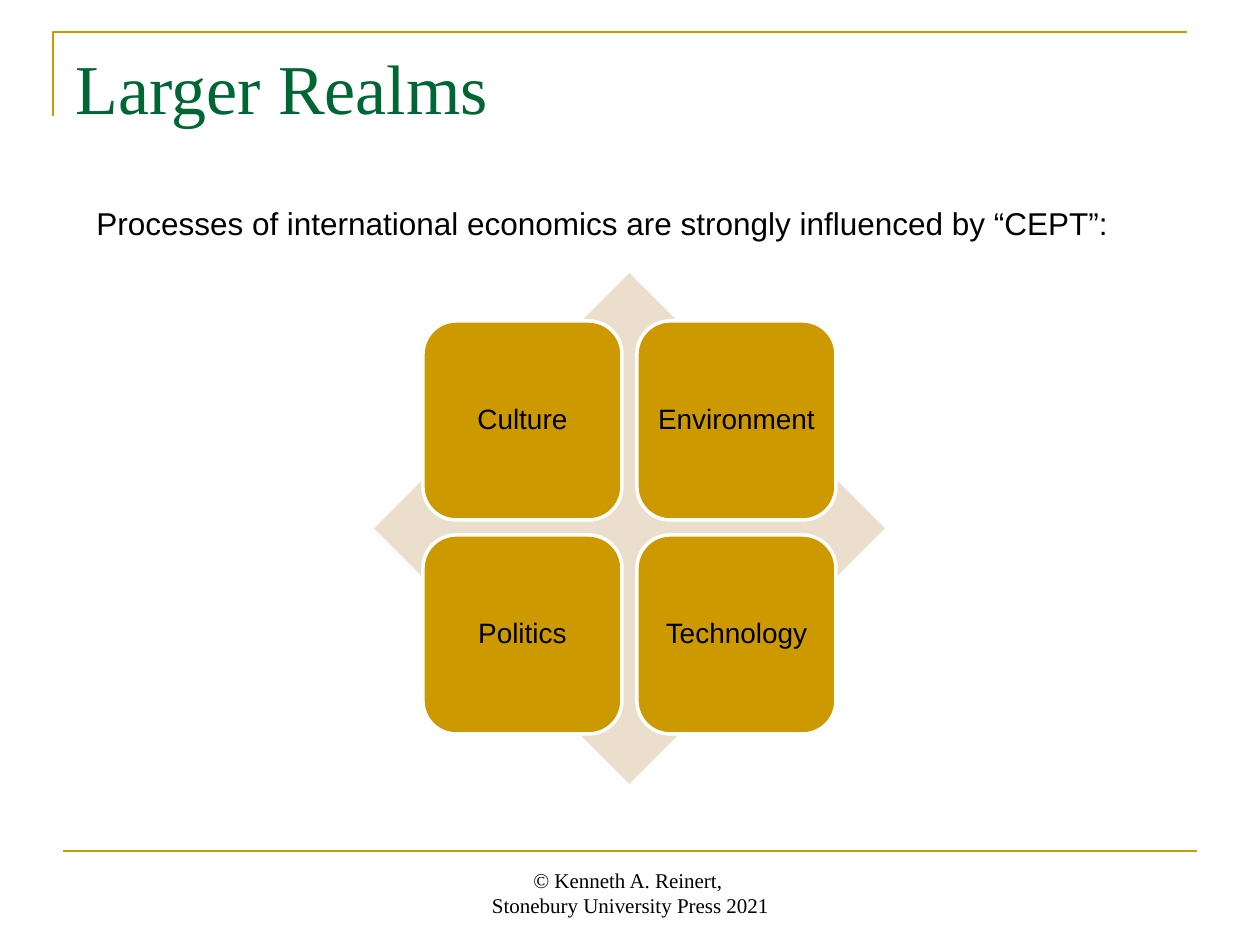
from pptx import Presentation, util as u
from pptx.dml.color import RGBColor
from pptx.enum import shapes, text
from pptx.oxml import ns
from lxml import etree

GOLD = RGBColor(0xCC, 0x99, 0x00)
SAND = RGBColor(0xEC, 0xDE, 0xCC)
GREEN = RGBColor(0x00, 0x66, 0x33)
BLACK = RGBColor(0, 0, 0)
WHITE = RGBColor(255, 255, 255)
SANS, SERIF = "Arial", "Times New Roman"
PX = 914400 / 126


def px(*lengths):
    return [u.Emu(round(length * PX)) for length in lengths]


class SlideBuilder:
    """Holds the style and the current slide."""

    rule_width = u.Pt(1.5)
    tile_border = u.Pt(2)

    def __init__(self, deck):
        self.slide = deck.slides.add_slide(deck.slide_layouts[5])

    def fill_text(self, shape, lines, font, align=text.PP_ALIGN.LEFT,
                  anchor=text.MSO_ANCHOR.TOP, spacing=1.0, inset=None):
        frame = shape.text_frame
        frame.word_wrap = True
        frame.auto_size = text.MSO_AUTO_SIZE.NONE
        frame.vertical_anchor = anchor
        if inset is not None:
            for side in ("left", "top", "right", "bottom"):
                setattr(frame, f"margin_{side}", px(inset)[0])
        for number, line in enumerate(lines):
            para = frame.add_paragraph() if number else frame.paragraphs[0]
            para.alignment, para.line_spacing = align, spacing
            span = para.add_run()
            span.text = line
            for name, value in font.items():
                if name == "color":
                    span.font.color.rgb = value
                else:
                    setattr(span.font, name, value)

    def title(self, line, place, font):
        box = self.slide.shapes.title
        box.left, box.top, box.width, box.height = px(*place)
        self.fill_text(box, [line], font)

    def label(self, lines, place, font, **style):
        box = self.slide.shapes.add_textbox(*px(*place))
        self.fill_text(box, lines, font, **style)

    def shape(self, kind, place, fill, border=None):
        shape = self.slide.shapes.add_shape(kind, *px(*place))
        shape.shadow.inherit = False
        shape.fill.solid()
        shape.fill.fore_color.rgb = fill
        if border is None:
            shape.line.fill.background()
        else:
            shape.line.color.rgb = border
            shape.line.width = self.tile_border
        return shape

    def tile(self, line, place, font):
        shape = self.shape(shapes.MSO_SHAPE.ROUNDED_RECTANGLE, place, GOLD, WHITE)
        self.fill_text(shape, [line], font, align=text.PP_ALIGN.CENTER,
                       anchor=text.MSO_ANCHOR.MIDDLE, spacing=0.9, inset=9)

    def rule(self, start, end):
        line = self.slide.shapes.add_connector(
            shapes.MSO_CONNECTOR.STRAIGHT, *px(*start, *end))
        line.line.color.rgb = GOLD
        line.line.width = self.rule_width
        etree.SubElement(line.element.spPr, ns.qn("a:effectLst"))

    def corner(self, start, *points):
        builder = self.slide.shapes.build_freeform(*start, scale=PX)
        builder.add_line_segments(points, close=False)
        outline = builder.convert_to_shape()
        outline.shadow.inherit = False
        outline.fill.background()
        outline.line.color.rgb = GOLD
        outline.line.width = self.rule_width


def main():
    deck = Presentation()
    deck.slide_width, deck.slide_height = px(1260, 945)
    page = SlideBuilder(deck)

    # Frame lines
    page.corner((53, 116), (53, 32), (1187, 32))
    page.rule((63, 851), (1197, 851))

    # Title and introduction
    page.title("Larger Realms", (63, 38, 1134, 158),
               {"name": SERIF, "size": u.Pt(40), "color": GREEN})
    page.label(["Processes of international economics are strongly influenced by “CEPT”:"],
               (84, 198, 1047, 89), {"name": SANS, "size": u.Pt(18), "color": BLACK})

    # Diamond with a two-by-two grid of tiles
    page.shape(shapes.MSO_SHAPE.DIAMOND, (374, 273, 511, 511), SAND)
    left, top, size, step = 423, 321, 199, 214
    tile_font = {"name": SANS, "size": u.Pt(16), "color": BLACK}
    for index, realm in enumerate(["Culture", "Environment", "Politics", "Technology"]):
        row, column = divmod(index, 2)
        page.tile(realm, (left + column * step, top + row * step, size, size), tile_font)

    # Footer
    page.label(["© Kenneth A. Reinert, ", "Stonebury University Press 2021"],
               (431, 861, 399, 63), {"name": SERIF, "size": u.Pt(12), "color": BLACK},
               align=text.PP_ALIGN.CENTER, anchor=text.MSO_ANCHOR.BOTTOM)

    deck.save("out.pptx")


if __name__ == "__main__":
    main()
